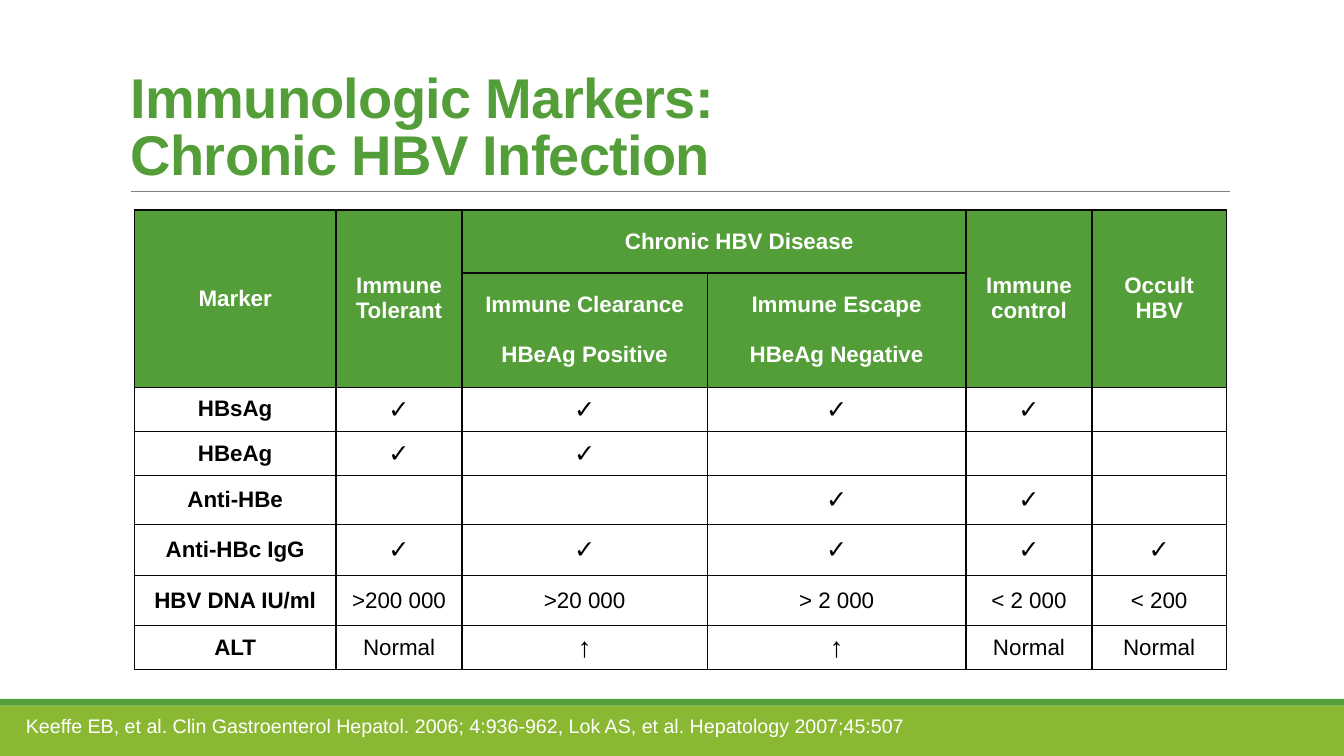
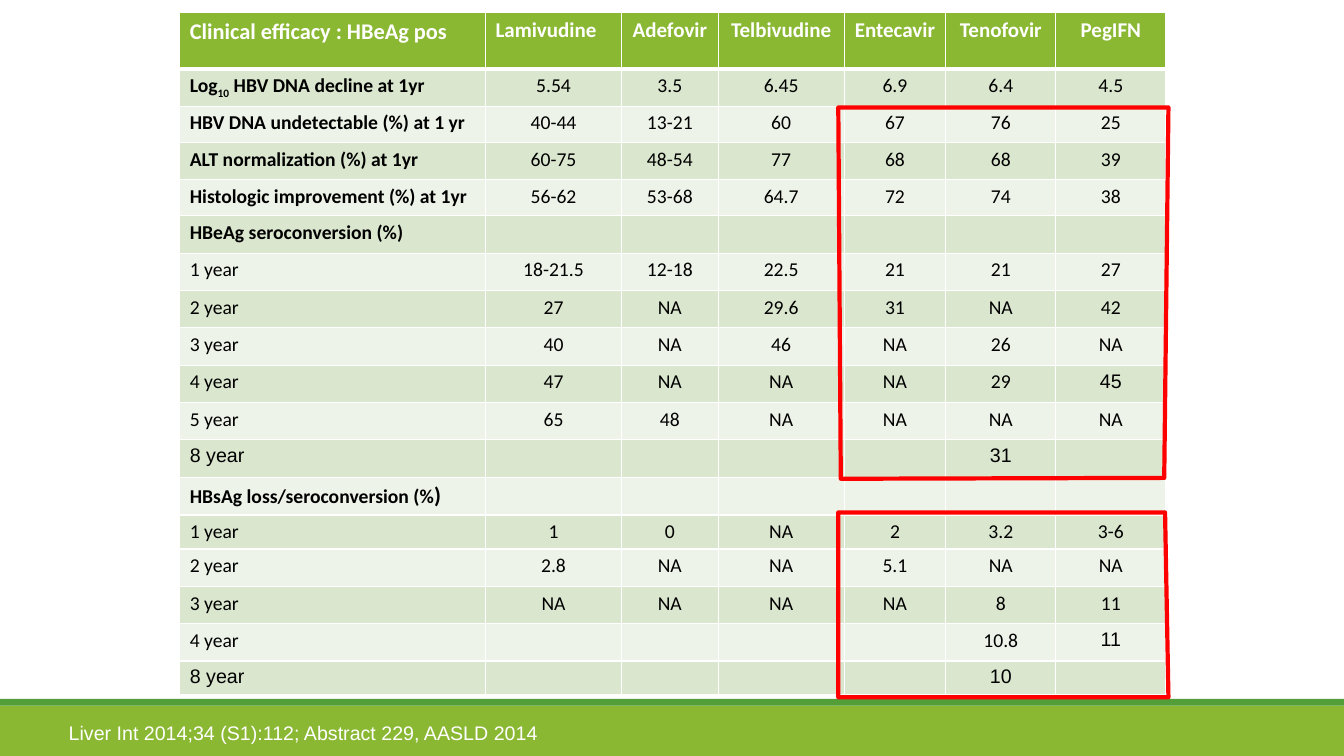
from dataclasses import dataclass
from typing import Any, NamedTuple, Sequence

import lxml.etree
import pptx
import pptx.dml.color
import pptx.enum.shapes
import pptx.enum.text
import pptx.oxml.ns
import pptx.util

ALIGN = pptx.enum.text.PP_ALIGN
ANCHOR = pptx.enum.text.MSO_ANCHOR
qn = pptx.oxml.ns.qn

COLUMNS, ROWS = 160, 90
SLIDE_WIDTH, SLIDE_HEIGHT = pptx.util.Pt(960), pptx.util.Pt(540)


@dataclass(frozen=True)
class Theme:
    green: str = "549E39"
    lime: str = "8AB833"
    band_dark: str = "DAE6CE"
    band_light: str = "EDF3E8"
    white: str = "FFFFFF"
    black: str = "000000"
    grid_line: str = "080808"
    rule: str = "808080"
    alert: str = "FF0000"
    sans: str = "Arial"
    table_font: str = "Calibri"
    title_size: int = 40
    arrow_size: int = 20
    check_size: int = 18
    marker_size: int = 16
    drug_size: int = 15
    small_size: int = 14


THEME = Theme()


class Box(NamedTuple):
    left: float
    top: float
    width: float
    height: float


class Run(NamedTuple):
    text: str
    size: float | None = None
    baseline: int = 0


class Merge(NamedTuple):
    top: int
    left: int
    bottom: int
    right: int


@dataclass(frozen=True)
class Grid:
    left: float
    top: float
    columns: Sequence[float]
    rows: Sequence[float]


@dataclass(frozen=True)
class Band:
    box: Box
    color: str


BANDS = (
    Band(Box(0, 84, COLUMNS, 6), THEME.lime),
    Band(Box(0, 83.2, COLUMNS, 0.8), THEME.green),
)

MARKER_GRID = Grid(16, 25, (24, 15, 29.2, 30.8, 15, 16),
                   (7.5, 13.6, 5.25, 5.25, 5.85, 6.05, 6, 5.25))
MARKER_ROWS = (
    ("Marker", "Immune\nTolerant", "Chronic HBV Disease", "", "Immune\ncontrol", "Occult\nHBV"),
    ("", "", "Immune Clearance\nHBeAg Positive", "Immune Escape\nHBeAg Negative", "", ""),
    ("HBsAg", "✓", "✓", "✓", "✓", ""),
    ("HBeAg", "✓", "✓", "", "", ""),
    ("Anti-HBe", "", "", "✓", "✓", ""),
    ("Anti-HBc IgG", "✓", "✓", "✓", "✓", "✓"),
    ("HBV DNA IU/ml", ">200 000", ">20 000", "> 2 000", "< 2 000", "< 200"),
    ("ALT", "Normal", "↑", "↑", "Normal", "Normal"),
)
MARKER_MERGES = (Merge(0, 2, 0, 3), *(Merge(0, c, 1, c) for c in (0, 1, 4, 5)))
SYMBOL_SIZES = {"✓": THEME.check_size, "↑": THEME.arrow_size}

EFFICACY_GRID = Grid(21.4, 1.5, (36.4, 16.2, 11.5, 15, 12.1, 13.1, 13.1),
                     (6.7, 4.45, 4.3, 4.45, 4.3, *[4.45] * 7, 4.5, 4.05, *[4.45] * 3, 3.9))
EFFICACY_ROWS = (
    ("Clinical efficacy : HBeAg pos", "Lamivudine", "Adefovir", "Telbivudine",
     "Entecavir", "Tenofovir", "PegIFN"),
    ((Run("Log"), Run("10", baseline=-25000), Run(" HBV DNA decline at 1yr")),
     "5.54", "3.5", "6.45", "6.9", "6.4", "4.5"),
    ("HBV DNA undetectable (%) at 1 yr", "40-44", "13-21", "60", "67", "76", "25"),
    ("ALT normalization (%) at 1yr", "60-75", "48-54", "77", "68", "68", "39"),
    ("Histologic improvement (%) at 1yr", "56-62", "53-68", "64.7", "72", "74", "38"),
    ("HBeAg seroconversion (%)", "", "", "", "", "", ""),
    ("1 year", "18-21.5", "12-18", "22.5", "21", "21", "27"),
    ("2 year", "27", "NA", "29.6", "31", "NA", "42"),
    ("3 year", "40", "NA", "46", "NA", "26", "NA"),
    ("4 year", "47", "NA", "NA", "NA", "29", "45"),
    ("5 year", "65", "48", "NA", "NA", "NA", "NA"),
    ("8 year", "", "", "", "", "31", ""),
    ((Run("HBsAg loss/seroconversion (%"), Run(")", size=THEME.marker_size)),
     "", "", "", "", "", ""),
    ("1 year", "1", "0", "NA", "2", "3.2", "3-6"),
    ("2 year", "2.8", "NA", "NA", "5.1", "NA", "NA"),
    ("3 year", "NA", "NA", "NA", "NA", "8", "11"),
    ("4 year", "", "", "", "", "10.8", "11"),
    ("8 year", "", "", "", "", "10", ""),
)
SANS_CELLS = {(9, 6), (11, 0), (11, 5), (16, 6), (17, 0), (17, 5)}
HIGHLIGHTS = (
    ((99.8, 12.8), (139.1, 12.8), (138.6, 56.9), (100.1, 57)),
    ((99.8, 61), (138.7, 61), (139.1, 83), (99.8, 83)),
)


def across(units: float) -> int:
    return round(SLIDE_WIDTH * units / COLUMNS)


def down(units: float) -> int:
    return round(SLIDE_HEIGHT * units / ROWS)


def place(box: Box) -> tuple[int, int, int, int]:
    return across(box.left), down(box.top), across(box.width), down(box.height)


def rgb(color: str) -> pptx.dml.color.RGBColor:
    return pptx.dml.color.RGBColor.from_string(color)


def write(frame: Any, text: str | Sequence[Run], *, font: str = THEME.sans,
          size: float = THEME.small_size, color: str = THEME.black, bold: bool = False,
          align: Any = ALIGN.LEFT, line_spacing: float | None = None,
          gap: float = 0, indent: float = 0, tracking: int = 0) -> None:
    lines = [[Run(line)] for line in text.split("\n")] if isinstance(text, str) else [text]
    for index, runs in enumerate(lines):
        paragraph = frame.add_paragraph() if index else frame.paragraphs[0]
        paragraph.alignment = align
        if line_spacing:
            paragraph.line_spacing = line_spacing
        if gap and index:
            paragraph.space_before = pptx.util.Pt(gap)
        if indent:
            properties = paragraph._p.get_or_add_pPr()
            properties.set("marL", str(across(indent)))
            properties.set("indent", "0")
        for part in runs:
            if not part.text:
                ending = lxml.etree.SubElement(paragraph._p, qn("a:endParaRPr"))
                ending.set("sz", str(round(size * 100)))
                continue
            run = paragraph.add_run()
            run.text = part.text
            run.font.name = font
            run.font.size = pptx.util.Pt(part.size or size)
            run.font.bold = bold
            run.font.color.rgb = rgb(color)
            if part.baseline:
                run.font._element.set("baseline", str(part.baseline))
            if tracking:
                run.font._element.set("spc", str(tracking))


def add_text(slide: Any, box: Box, text: str, *, anchor: Any = ANCHOR.TOP, **style: Any) -> None:
    frame = slide.shapes.add_textbox(*place(box)).text_frame
    frame.word_wrap = True
    frame.vertical_anchor = anchor
    write(frame, text, **style)


def add_bands(slide: Any) -> None:
    for band in BANDS:
        strip = slide.shapes.add_shape(
            pptx.enum.shapes.MSO_SHAPE.RECTANGLE, *place(band.box))
        strip.shadow.inherit = False
        strip.fill.solid()
        strip.fill.fore_color.rgb = rgb(band.color)
        strip.line.fill.background()


def add_citation(slide: Any, box: Box, text: str, **style: Any) -> None:
    add_text(slide, box, text, color=THEME.white, **style)


def add_title(slide: Any, text: str) -> None:
    add_text(slide, Box(14.4, 3.7, 132, 19.1), text, anchor=ANCHOR.BOTTOM,
             size=THEME.title_size, color=THEME.green, bold=True,
             line_spacing=0.85, tracking=-50)
    rule = slide.shapes.add_connector(
        pptx.enum.shapes.MSO_CONNECTOR.STRAIGHT,
        across(15.6), down(22.8), across(146.4), down(22.8))
    rule.line.color.rgb = rgb(THEME.rule)
    rule.line.width = pptx.util.Pt(0.5)
    lxml.etree.SubElement(rule._element.spPr, qn("a:effectLst"))


def add_grid(slide: Any, grid: Grid) -> Any:
    table = slide.shapes.add_table(
        len(grid.rows), len(grid.columns),
        *place(Box(grid.left, grid.top, sum(grid.columns), sum(grid.rows)))).table
    table.first_row = table.horz_banding = False
    for column, width in zip(table.columns, grid.columns):
        column.width = across(width)
    for row, height in zip(table.rows, grid.rows):
        row.height = down(height)
    return table


def dress_cell(cell: Any, fill: str, border: str, bottom: float = 1) -> None:
    properties = cell._tc.get_or_add_tcPr()
    for side, width in (("L", 1), ("R", 1), ("T", 1), ("B", bottom)):
        edge = lxml.etree.SubElement(properties, qn(f"a:ln{side}"))
        edge.set("w", str(pptx.util.Pt(width)))
        paint = lxml.etree.SubElement(edge, qn("a:solidFill"))
        lxml.etree.SubElement(paint, qn("a:srgbClr")).set("val", border)
    cell.fill.solid()
    cell.fill.fore_color.rgb = rgb(fill)


def add_marker_table(slide: Any) -> None:
    table = add_grid(slide, MARKER_GRID)
    for merge in MARKER_MERGES:
        table.cell(merge.top, merge.left).merge(table.cell(merge.bottom, merge.right))
    for r, row in enumerate(MARKER_ROWS):
        header = r < 2
        for c, text in enumerate(row):
            cell = table.cell(r, c)
            dress_cell(cell, THEME.green if header else THEME.white, THEME.grid_line)
            cell.vertical_anchor = ANCHOR.MIDDLE
            write(cell.text_frame, text, size=SYMBOL_SIZES.get(text, THEME.marker_size),
                  color=THEME.white if header else THEME.black,
                  bold=header or c == 0 or text in SYMBOL_SIZES, align=ALIGN.CENTER,
                  gap=18 if r == 1 else 0, indent=6 if (r, c) == (0, 2) else 0)


def add_efficacy_table(slide: Any) -> None:
    table = add_grid(slide, EFFICACY_GRID)
    for r, row in enumerate(EFFICACY_ROWS):
        header = r == 0
        heading = header or not str(row[0]).endswith("year")
        fill = THEME.lime if header else THEME.band_dark if r % 2 else THEME.band_light
        for c, text in enumerate(row):
            cell = table.cell(r, c)
            dress_cell(cell, fill, THEME.white, bottom=3 if header else 1)
            header_size = THEME.drug_size if c else THEME.marker_size
            left = c == 0 or (r, c) == (0, 1)
            write(cell.text_frame, text,
                  font=THEME.sans if (r, c) in SANS_CELLS else THEME.table_font,
                  size=header_size if header else THEME.small_size,
                  color=THEME.white if header else THEME.black,
                  bold=header or (heading and c == 0),
                  align=ALIGN.LEFT if left else ALIGN.CENTER)


def add_highlight(slide: Any, corners: Sequence[tuple[float, float]]) -> None:
    start, *others = [(across(x), down(y)) for x, y in corners]
    builder = slide.shapes.build_freeform(*start)
    builder.add_line_segments(others, close=True)
    outline = builder.convert_to_shape()
    outline.shadow.inherit = False
    outline.fill.background()
    outline.line.color.rgb = rgb(THEME.alert)
    outline.line.width = pptx.util.Pt(3)


def main() -> None:
    deck = pptx.Presentation()
    deck.slide_width, deck.slide_height = SLIDE_WIDTH, SLIDE_HEIGHT
    markers, efficacy = (deck.slides.add_slide(deck.slide_layouts[6]) for _ in range(2))

    add_bands(markers)
    add_citation(markers, Box(1.9, 84.7, 120, 3.8),
                 "Keeffe EB, et al. Clin Gastroenterol Hepatol. 2006; 4:936-962, "
                 "Lok AS, et al. Hepatology 2007;45:507", line_spacing=0.9)
    add_marker_table(markers)
    add_title(markers, "Immunologic Markers:\nChronic HBV Infection")

    add_bands(efficacy)
    add_efficacy_table(efficacy)
    for corners in HIGHLIGHTS:
        add_highlight(efficacy, corners)
    add_citation(efficacy, Box(7, 85.2, 58.6, 4.1),
                 "Liver Int 2014;34 (S1):112; Abstract 229, AASLD 2014")

    deck.save("out.pptx")


if __name__ == "__main__":
    main()
